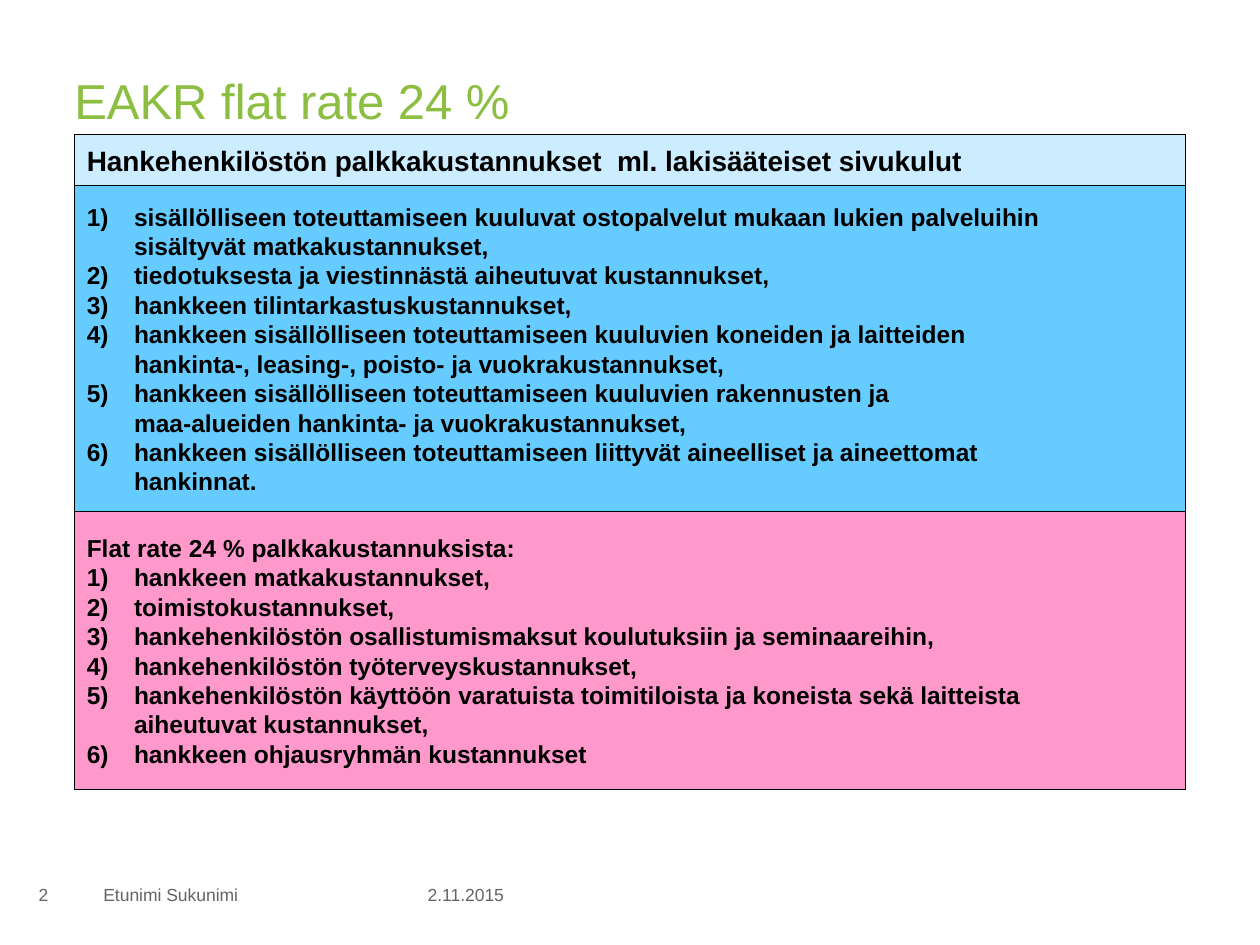
import pptx
import pptx.util
import pptx.dml.color
import pptx.enum.shapes
import pptx.enum.text
import pptx.oxml

Pt = pptx.util.Pt
ALIGN = pptx.enum.text.PP_ALIGN
ANCHOR = pptx.enum.text.MSO_ANCHOR

COLOURS = {
    "title": "8CBE41",
    "footer": "646464",
    "ink": "000000",
    "salary": "CCECFF",
    "direct": "66CCFF",
    "flat": "FF99CC",
}
NAMESPACE = 'xmlns:a="http://schemas.openxmlformats.org/drawingml/2006/main"'
INDENT = Pt(27)

# Each item is one numbered paragraph; a newline is a line break inside it
DIRECT_COSTS = [
    "sisällölliseen toteuttamiseen kuuluvat ostopalvelut mukaan lukien palveluihin\n"
    "sisältyvät matkakustannukset,",
    "tiedotuksesta ja viestinnästä aiheutuvat kustannukset,",
    "hankkeen tilintarkastuskustannukset,",
    "hankkeen sisällölliseen toteuttamiseen kuuluvien koneiden ja laitteiden\n"
    "hankinta-, leasing-, poisto- ja vuokrakustannukset,",
    "hankkeen sisällölliseen toteuttamiseen kuuluvien rakennusten ja\n"
    "maa-alueiden hankinta- ja vuokrakustannukset,",
    "hankkeen sisällölliseen toteuttamiseen liittyvät aineelliset ja aineettomat\n"
    "hankinnat.",
]
FLAT_RATE_COSTS = [
    "hankkeen matkakustannukset,",
    "toimistokustannukset,",
    "hankehenkilöstön osallistumismaksut koulutuksiin ja seminaareihin,",
    "hankehenkilöstön työterveyskustannukset,",
    "hankehenkilöstön käyttöön varatuista toimitiloista ja koneista sekä laitteista\n"
    "aiheutuvat kustannukset,",
    "hankkeen ohjausryhmän kustannukset",
]


class SlideBuilder:
    def __init__(self, slide, font="Arial"):
        self.slide = slide
        self.font = font

    def colour(self, name):
        return pptx.dml.color.RGBColor.from_string(COLOURS[name])

    def add_spans(self, para, text, size, colour, bold=False):
        for index, line in enumerate(text.split("\n")):
            if index:
                para.add_line_break()
            span = para.add_run()
            span.text = line
            span.font.name = self.font
            span.font.size = Pt(size)
            span.font.bold = bold
            span.font.color.rgb = self.colour(colour)

    def number(self, para):
        properties = para._p.get_or_add_pPr()
        properties.set("marL", str(INDENT))
        properties.set("indent", str(-INDENT))
        properties.append(pptx.oxml.parse_xml(
            f'<a:buFont {NAMESPACE} typeface="+mj-lt"/>'))
        properties.append(pptx.oxml.parse_xml(
            f'<a:buAutoNum {NAMESPACE} type="arabicParenR"/>'))

    def label(self, text, left, top, width, height, size, colour,
              insets=(7.2, 3.6, 0, 3.6), anchor=ANCHOR.MIDDLE, align=ALIGN.LEFT):
        box = self.slide.shapes.add_textbox(Pt(left), Pt(top), Pt(width), Pt(height))
        frame = box.text_frame
        frame.word_wrap = True
        frame.vertical_anchor = anchor
        (frame.margin_left, frame.margin_top,
         frame.margin_right, frame.margin_bottom) = map(Pt, insets)
        para = frame.paragraphs[0]
        para.alignment = align
        self.add_spans(para, text, size, colour)

    def panel(self, top, height, fill, heading=None, items=(), size=14):
        box = self.slide.shapes.add_shape(
            pptx.enum.shapes.MSO_SHAPE.RECTANGLE,
            Pt(42.5), Pt(top), Pt(635), Pt(height))
        box.shadow.inherit = False
        box.fill.solid()
        box.fill.fore_color.rgb = self.colour(fill)
        box.line.color.rgb = self.colour("ink")
        box.line.width = Pt(0.75)
        frame = box.text_frame
        frame.word_wrap = True
        frame.vertical_anchor = ANCHOR.MIDDLE
        lines = [(heading, False)] if heading else []
        lines += [(item, True) for item in items]
        for index, (text, numbered) in enumerate(lines):
            para = frame.add_paragraph() if index else frame.paragraphs[0]
            para.alignment = ALIGN.LEFT
            if numbered:
                self.number(para)
            self.add_spans(para, text, size, "ink", bold=True)


def main():
    deck = pptx.Presentation()
    deck.slide_width, deck.slide_height = Pt(720), Pt(540)
    page = SlideBuilder(deck.slides.add_slide(deck.slide_layouts[6]))

    # Title
    page.label("EAKR flat rate 24 %", 42.5, 37.5, 635, 70.5, 28, "title",
               insets=(0, 3, 0, 0), anchor=ANCHOR.TOP)

    # Footer
    page.label("2", 15, 497, 34, 28, 10, "footer")
    page.label("Etunimi Sukunimi", 52, 497, 156, 28, 10, "footer")
    page.label("2.11.2015", 210, 497, 85, 28, 10, "footer",
               insets=(7.2, 3.6, 7.2, 3.6), align=ALIGN.RIGHT)

    # Stacked cost panels
    page.panel(77, 29, "salary", size=16,
               heading="Hankehenkilöstön palkkakustannukset  ml. lakisääteiset sivukulut")
    page.panel(106, 186.5, "direct", items=DIRECT_COSTS)
    page.panel(292.5, 158.5, "flat", items=FLAT_RATE_COSTS,
               heading="Flat rate 24 % palkkakustannuksista:")

    deck.save("out.pptx")


if __name__ == "__main__":
    main()
